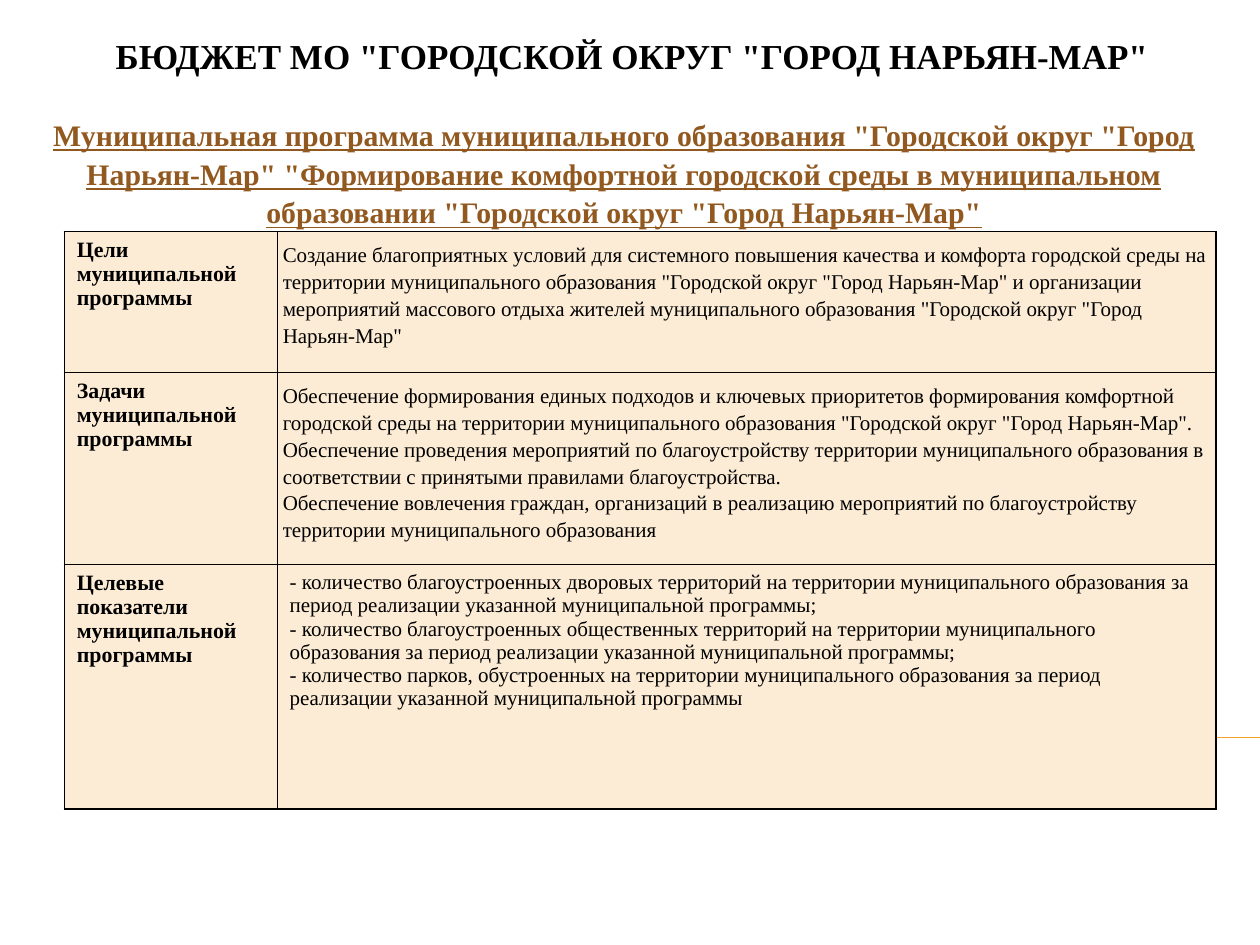
from dataclasses import dataclass

import pptx
import pptx.dml.color
import pptx.enum.shapes
import pptx.enum.text
import pptx.oxml
import pptx.oxml.ns
import pptx.util

Cm = pptx.util.Cm
Pt = pptx.util.Pt

COLORS = {
    "text": "000000",
    "heading": "91581F",
    "cell": "FCECD5",
    "border": "000000",
    "rule": "F0A22E",
}
FONT = "Times New Roman"
COLUMN_WIDTHS = (4.29, 18.92)
BORDER_TAGS = ("a:lnL", "a:lnR", "a:lnT", "a:lnB")


@dataclass
class Style:
    size: float
    bold: bool = False
    underline: bool = False
    color: str = "text"
    align: pptx.enum.text.PP_ALIGN = pptx.enum.text.PP_ALIGN.LEFT
    spacing: float = 1.0


@dataclass
class Heading:
    text: str
    left: float
    top: float
    width: float
    height: float
    style: Style


@dataclass
class ProgramRow:
    label: str
    paragraphs: tuple[str, ...]
    height: float
    style: Style
    margins: tuple[float, float]


CENTER = pptx.enum.text.PP_ALIGN.CENTER
LABEL = Style(12.5, bold=True)
BODY = Style(12)
SPACED_BODY = Style(12, spacing=1.15)
WIDE_MARGINS = (0.25, 0.13)
TIGHT_MARGINS = (0.11, 0.18)

HEADINGS = (
    Heading('БЮДЖЕТ МО "ГОРОДСКОЙ ОКРУГ "ГОРОД НАРЬЯН-МАР"',
            0.99, 0.58, 23.5, 3.4, Style(20, bold=True, align=CENTER)),
    Heading('Муниципальная программа муниципального образования "Городской округ '
            '"Город Нарьян-Мар" "Формирование комфортной городской среды в '
            'муниципальном образовании "Городской округ "Город Нарьян-Мар"',
            0.58, 2.18, 24, 1.19,
            Style(17, bold=True, underline=True, color="heading",
                  align=CENTER, spacing=1.08)),
)

ROWS = (
    ProgramRow(
        "Цели муниципальной программы",
        ('Создание благоприятных условий для системного повышения качества и '
         'комфорта городской среды на территории муниципального образования '
         '"Городской округ "Город Нарьян-Мар" и организации мероприятий '
         'массового отдыха жителей муниципального образования "Городской округ '
         '"Город Нарьян-Мар"',),
        2.84, SPACED_BODY, TIGHT_MARGINS),
    ProgramRow(
        "Задачи муниципальной программы",
        ('Обеспечение формирования единых подходов и ключевых приоритетов '
         'формирования комфортной городской среды на территории муниципального '
         'образования "Городской округ "Город Нарьян-Мар".',
         'Обеспечение проведения мероприятий по благоустройству территории '
         'муниципального образования в соответствии с принятыми правилами '
         'благоустройства.',
         'Обеспечение вовлечения граждан, организаций в реализацию мероприятий '
         'по благоустройству территории муниципального образования'),
        3.79, SPACED_BODY, TIGHT_MARGINS),
    ProgramRow(
        "Целевые показатели муниципальной программы",
        ('- количество благоустроенных дворовых территорий на территории '
         'муниципального образования за период реализации указанной '
         'муниципальной программы;',
         '- количество благоустроенных общественных территорий на территории '
         'муниципального образования за период реализации указанной '
         'муниципальной программы;',
         '- количество парков, обустроенных на территории муниципального '
         'образования за период реализации указанной муниципальной программы'),
        4.93, BODY, WIDE_MARGINS),
)


def rgb(name: str) -> pptx.dml.color.RGBColor:
    return pptx.dml.color.RGBColor.from_string(COLORS[name])


def write_text(frame, paragraphs: tuple[str, ...], style: Style) -> None:
    font_format = {"name": FONT, "size": Pt(style.size),
                   "bold": style.bold, "underline": style.underline}
    for index, text in enumerate(paragraphs):
        para = frame.add_paragraph() if index else frame.paragraphs[0]
        para.alignment = style.align
        para.line_spacing = style.spacing
        span = para.add_run()
        span.text = text
        for name, value in font_format.items():
            setattr(span.font, name, value)
        span.font.color.rgb = rgb(style.color)


def add_heading(page, heading: Heading) -> None:
    box = page.shapes.add_textbox(Cm(heading.left), Cm(heading.top),
                                  Cm(heading.width), Cm(heading.height))
    box.text_frame.word_wrap = True
    write_text(box.text_frame, (heading.text,), heading.style)


def add_borders(cell) -> None:
    properties = cell._tc.get_or_add_tcPr()
    for position, tag in enumerate(BORDER_TAGS):
        properties.insert(position, pptx.oxml.parse_xml(
            f'<{tag} {pptx.oxml.ns.nsdecls("a")} w="{Pt(1)}"><a:solidFill>'
            f'<a:srgbClr val="{COLORS["border"]}"/></a:solidFill></{tag}>'))


def fill_cell(cell, paragraphs: tuple[str, ...], style: Style,
              margins: tuple[float, float]) -> None:
    side, edge = (Cm(margin) for margin in margins)
    cell_format = {"margin_left": side, "margin_right": side,
                   "margin_top": edge, "margin_bottom": edge}
    for name, value in cell_format.items():
        setattr(cell, name, value)
    cell.fill.solid()
    cell.fill.fore_color.rgb = rgb("cell")
    add_borders(cell)
    write_text(cell.text_frame, paragraphs, style)


def add_program_table(page, rows: tuple[ProgramRow, ...]) -> None:
    table = page.shapes.add_table(
        len(rows), len(COLUMN_WIDTHS), Cm(1.3), Cm(4.67),
        Cm(sum(COLUMN_WIDTHS)), Cm(sum(row.height for row in rows))).table
    for column, width in zip(table.columns, COLUMN_WIDTHS):
        column.width = Cm(width)
    for index, row in enumerate(rows):
        table.rows[index].height = Cm(row.height)
        fill_cell(table.cell(index, 0), (row.label,), LABEL, WIDE_MARGINS)
        fill_cell(table.cell(index, 1), row.paragraphs, row.style, row.margins)


def add_rule(page) -> None:
    rule = page.shapes.add_connector(
        pptx.enum.shapes.MSO_CONNECTOR.STRAIGHT,
        Cm(1.42), Cm(14.86), Cm(25.4), Cm(14.86))
    rule.line.color.rgb = rgb("rule")
    rule.line.width = Pt(0.75)
    rule._element.spPr.append(pptx.oxml.parse_xml(
        f'<a:effectLst {pptx.oxml.ns.nsdecls("a")}/>'))


def main() -> None:
    deck = pptx.Presentation()
    deck.slide_width, deck.slide_height = Cm(25.4), Cm(19.05)
    page = deck.slides.add_slide(deck.slide_layouts[6])

    # Rule running behind the table
    add_rule(page)

    # Title and program name
    for heading in HEADINGS:
        add_heading(page, heading)

    # Goals, tasks and target indicators
    add_program_table(page, ROWS)

    deck.save("out.pptx")


if __name__ == "__main__":
    main()
